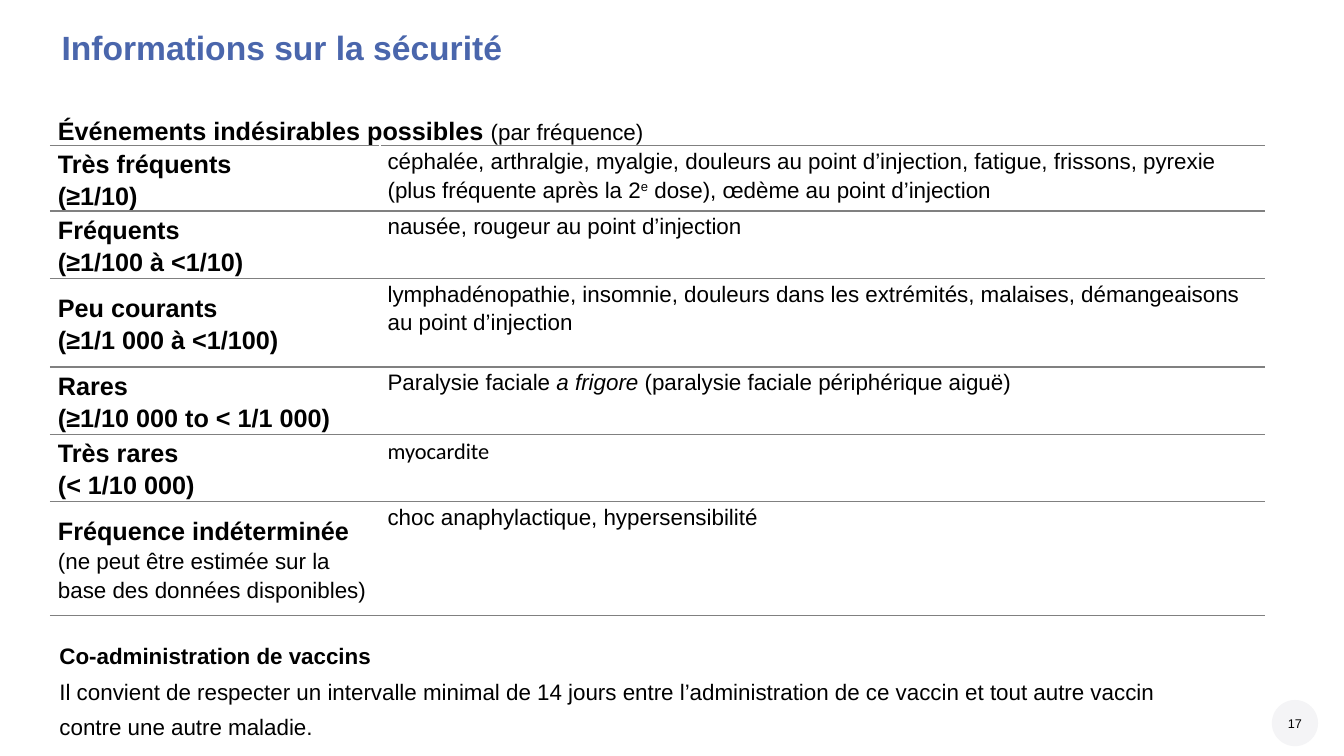
import pptx
import pptx.dml.color
import pptx.enum.shapes
import pptx.enum.text
import pptx.oxml.ns
import pptx.util
from dataclasses import dataclass
from lxml import etree

Pt = pptx.util.Pt
Align = pptx.enum.text.PP_ALIGN
Anchor = pptx.enum.text.MSO_ANCHOR


@dataclass(frozen=True)
class Theme:
    heading: str = "4A66AC"
    ink: str = "000000"
    paper: str = "FFFFFF"
    rule: str = "808080"
    badge: str = "F4F4F6"
    font: str = "Arial"
    alternate_font: str = "Calibri"
    title_size: int = 24
    label_size: int = 18
    text_size: int = 16
    number_size: int = 9


THEME = Theme()
LABEL = {"size": Pt(THEME.label_size), "bold": True}
PLAIN = {"size": Pt(THEME.text_size), "bold": False}
STRONG = {**PLAIN, "bold": True}
ITALIC = {**PLAIN, "italic": True}
ALTERNATE = {**PLAIN, "name": THEME.alternate_font}
SUPERSCRIPT = {**PLAIN, "baseline": 30000}

HEADER = [[("Événements indésirables possibles ", LABEL), ("(par fréquence)", PLAIN)]]
FREQUENCIES = [
    (46.5, [[("Très fréquents", LABEL)], [("(≥1/10)", LABEL)]],
     [("céphalée, arthralgie, myalgie, douleurs au point d’injection, fatigue, frissons, "
       "pyrexie (plus fréquente après la 2", PLAIN), ("e", SUPERSCRIPT),
      (" dose), œdème au point d’injection", PLAIN)]),
    (48, [[("Fréquents", LABEL)], [("(≥1/100 à ˂1/10)", LABEL)]],
     [("nausée, rougeur au point d’injection", PLAIN)]),
    (63.5, [[("Peu courants", LABEL)], [("(≥1/1 000 à ˂1/100)", LABEL)]],
     [("lymphadénopathie, insomnie, douleurs dans les extrémités, malaises, "
       "démangeaisons au point d’injection", PLAIN)]),
    (48, [[("Rares", LABEL)], [("(≥1/10 000 to ˂ 1/1 000)", LABEL)]],
     [("Paralysie faciale ", PLAIN), ("a frigore", ITALIC),
      (" (paralysie faciale périphérique aiguë)", PLAIN)]),
    (48, [[("Très rares", LABEL)], [("(< 1/10 000)", LABEL)]],
     [("myocardite", ALTERNATE)]),
    (81.5, [[("Fréquence indéterminée", LABEL)],
            [("(ne peut être estimée sur la base des données disponibles)", PLAIN)]],
     [("choc anaphylactique, hypersensibilité", PLAIN)]),
]
COADMINISTRATION = [
    [("Co-administration de vaccins", STRONG)],
    [("Il convient de respecter un intervalle minimal de 14 jours entre "
      "l’administration de ce vaccin et tout autre vaccin", PLAIN)],
    [("contre une autre maladie.", PLAIN)],
]


def set_attributes(target, values):
    for name, value in values.items():
        setattr(target, name, value)


def set_frame(frame, anchor, wrap=True):
    set_attributes(frame, {"margin_left": 0, "margin_right": 0, "margin_top": 0,
                           "margin_bottom": 0, "vertical_anchor": anchor, "word_wrap": wrap})


def write_paragraphs(frame, paragraphs, color=THEME.ink, **spacing):
    for index, pieces in enumerate(paragraphs):
        paragraph = frame.add_paragraph() if index else frame.paragraphs[0]
        set_attributes(paragraph, {"alignment": Align.LEFT, **spacing})
        if not index:
            paragraph.space_before = Pt(0)
        for text, style in pieces:
            run = paragraph.add_run()
            run.text = text
            values = {"name": THEME.font, **style}
            baseline = values.pop("baseline", None)
            set_attributes(run.font, values)
            run.font.color.rgb = pptx.dml.color.RGBColor.from_string(color)
            if baseline:
                run.font._element.set("baseline", str(baseline))


def set_borders(cell, top):
    properties = cell._tc.get_or_add_tcPr()
    sides = {"a:lnL": THEME.paper, "a:lnR": THEME.paper, "a:lnT": top, "a:lnB": THEME.rule}
    for index, (tag, color) in enumerate(sides.items()):
        line = etree.Element(pptx.oxml.ns.qn(tag), w=str(Pt(1)))
        fill = etree.SubElement(line, pptx.oxml.ns.qn("a:solidFill"))
        etree.SubElement(fill, pptx.oxml.ns.qn("a:srgbClr"), val=color)
        properties.insert(index, line)


def fill_cell(cell, paragraphs, anchor):
    set_attributes(cell, {"margin_left": Pt(5.4), "margin_right": Pt(5.4), "margin_top": 0,
                          "margin_bottom": 0, "vertical_anchor": anchor})
    write_paragraphs(cell.text_frame, paragraphs, line_spacing=1.15)


def add_title(slide, text):
    title = slide.shapes.title
    set_attributes(title, {"left": Pt(44), "top": Pt(19), "width": Pt(873), "height": Pt(29)})
    set_frame(title.text_frame, Anchor.TOP)
    style = {"size": Pt(THEME.title_size), "bold": True}
    write_paragraphs(title.text_frame, [[(text, style)]], THEME.heading)


def add_frequency_table(slide):
    heights = [22.5] + [height for height, _, _ in FREQUENCIES]
    table = slide.shapes.add_table(len(heights), 2, Pt(36), Pt(81),
                                   Pt(867), Pt(sum(heights))).table
    set_attributes(table, {"first_row": False, "horz_banding": False})
    for column, width in zip(table.columns, (235.5, 631.5)):
        column.width = Pt(width)
    for index, (row, height) in enumerate(zip(table.rows, heights)):
        row.height = Pt(height)
        for cell in row.cells:
            cell.fill.background()
            set_borders(cell, THEME.rule if index else THEME.paper)
    table.cell(0, 0).merge(table.cell(0, 1))
    fill_cell(table.cell(0, 0), HEADER, Anchor.MIDDLE)
    for index, (_, label, events) in enumerate(FREQUENCIES, 1):
        fill_cell(table.cell(index, 0), label, Anchor.MIDDLE)
        fill_cell(table.cell(index, 1), [events], Anchor.TOP)


def add_note(slide, paragraphs):
    note = slide.shapes.add_textbox(Pt(42.5), Pt(459), Pt(828), Pt(72))
    set_frame(note.text_frame, Anchor.TOP, wrap=False)
    write_paragraphs(note.text_frame, paragraphs, space_before=Pt(3), space_after=Pt(3))


def add_page_number(slide, number):
    badge = slide.shapes.add_shape(pptx.enum.shapes.MSO_SHAPE.OVAL,
                                   Pt(908.5), Pt(500), Pt(33), Pt(33))
    badge.shadow.inherit = False
    badge.fill.solid()
    badge.fill.fore_color.rgb = pptx.dml.color.RGBColor.from_string(THEME.badge)
    badge.line.fill.background()
    set_frame(badge.text_frame, Anchor.MIDDLE)
    style = {"size": Pt(THEME.number_size)}
    write_paragraphs(badge.text_frame, [[(number, style)]], alignment=Align.CENTER)


def main():
    deck = pptx.Presentation()
    set_attributes(deck, {"slide_width": Pt(960), "slide_height": Pt(540)})
    slide = deck.slides.add_slide(deck.slide_layouts.get_by_name("Title Only"))
    add_page_number(slide, "17")
    add_title(slide, "Informations sur la sécurité")
    add_frequency_table(slide)
    add_note(slide, COADMINISTRATION)
    deck.save("out.pptx")


if __name__ == "__main__":
    main()
